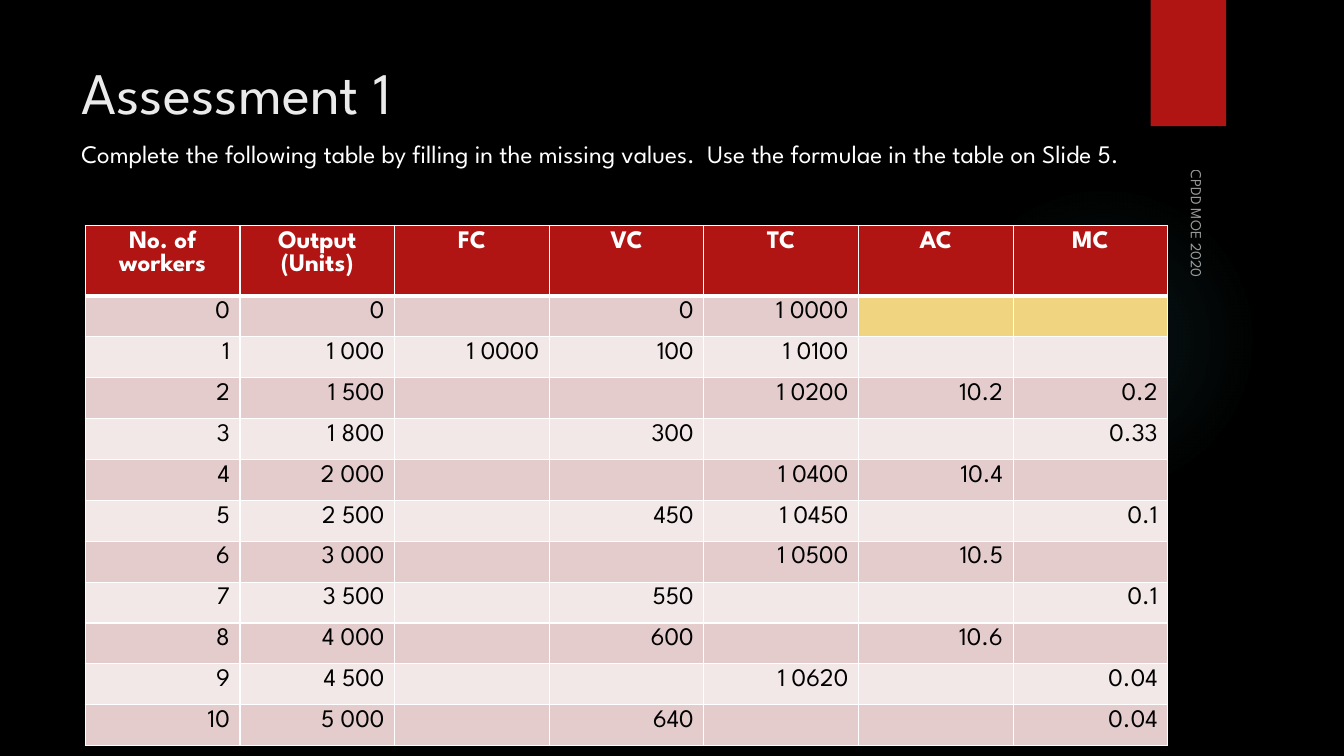
from lxml import etree
from pptx import Presentation
from pptx.dml.color import RGBColor
from pptx.enum.shapes import MSO_SHAPE as Shape
from pptx.enum.text import MSO_ANCHOR as Anchor, PP_ALIGN as Align
from pptx.oxml import parse_xml
from pptx.oxml.ns import nsdecls, qn
from pptx.util import Cm, Pt

# Content
TITLE = "Assessment 1"
TASK = ("Complete the following table by filling in the missing values.  "
        "Use the formulae in the table on Slide 5.")
FOOTER = "CPDD MOE 2020"
HEADINGS = ["No. of workers", "Output (Units)", "FC", "VC", "TC", "AC", "MC"]
COSTS = [
    ["0", "0", "", "0", "1 0000", "", ""],
    ["1", "1 000", "1 0000", "100", "1 0100", "", ""],
    ["2", "1 500", "", "", "1 0200", "10.2", "0.2"],
    ["3", "1 800", "", "300", "", "", "0.33"],
    ["4", "2 000", "", "", "1 0400", "10.4", ""],
    ["5", "2 500", "", "450", "1 0450", "", "0.1"],
    ["6", "3 000", "", "", "1 0500", "10.5", ""],
    ["7", "3 500", "", "550", "", "", "0.1"],
    ["8", "4 000", "", "600", "", "10.6", ""],
    ["9", "4 500", "", "", "1 0620", "", "0.04"],
    ["10", "5 000", "", "640", "", "", "0.04"],
]
NOT_APPLICABLE = {(1, 5), (1, 6)}

# Format
FONT = "League Spartan"
BLACK = RGBColor(0x00, 0x00, 0x00)
WHITE = RGBColor(0xFF, 0xFF, 0xFF)
PALE = RGBColor(0xEB, 0xEB, 0xEB)
RED = RGBColor(0xB0, 0x15, 0x13)
BANDS = [RGBColor(0xF2, 0xE8, 0xE7), RGBColor(0xE4, 0xCC, 0xCC)]
YELLOW = RGBColor(0xF0, 0xD4, 0x7F)
GLOW = RGBColor(0x50, 0xB9, 0xC1)
GLOW_STOPS = [(0, 7), (36, 6), (69, 0)]  # position and opacity in percent
TABLE_WIDTH, HEADING_HEIGHT, ROW_HEIGHT = Cm(27.28), Cm(1.43), Cm(1.03)


def write(paragraph, text, size, color, bold=False):
    run = paragraph.add_run()
    run.text = text
    run.font.color.rgb = color
    for name, value in {"name": FONT, "size": Pt(size), "bold": bold}.items():
        setattr(run.font, name, value)
    return run


def add_text(slide, box, text, size, color, **frame_format):
    label = slide.shapes.add_textbox(*map(Cm, box))
    for name, value in {"word_wrap": True, **frame_format}.items():
        setattr(label.text_frame, name, value)
    return label, write(label.text_frame.paragraphs[0], text, size, color)


def add_plain_shape(slide, kind, box):
    shape = slide.shapes.add_shape(kind, *map(Cm, box))
    shape.shadow.inherit = False
    shape.line.fill.background()
    return shape


def add_borders(cell, row):
    widths = {"L": 1, "R": 1, "T": 3 if row == 1 else 1, "B": 3 if row == 0 else 1}
    for side, width in widths.items():
        cell._tc.get_or_add_tcPr().append(parse_xml(
            f'<a:ln{side} {nsdecls("a")} w="{Pt(width)}"><a:solidFill>'
            f'<a:srgbClr val="{WHITE}"/></a:solidFill></a:ln{side}>'))


def main():
    deck = Presentation()
    deck.slide_width, deck.slide_height = Cm(33.87), Cm(19.05)
    slide = deck.slides.add_slide(deck.slide_layouts[6])
    slide.background.fill.solid()
    slide.background.fill.fore_color.rgb = BLACK

    # Soft glow and red tab
    glow = add_plain_shape(slide, Shape.OVAL, (23.9, 4.65, 7.82, 7.82))
    stops = "".join(
        f'<a:gs pos="{place * 1000}"><a:srgbClr val="{GLOW}">'
        f'<a:alpha val="{opacity * 1000}"/></a:srgbClr></a:gs>'
        for place, opacity in GLOW_STOPS)
    glow._element.spPr.find(qn("a:prstGeom")).addnext(parse_xml(
        f'<a:gradFill {nsdecls("a")}><a:gsLst>{stops}</a:gsLst><a:path path="circle">'
        '<a:fillToRect l="50000" t="50000" r="50000" b="50000"/></a:path></a:gradFill>'))
    tab = add_plain_shape(slide, Shape.RECTANGLE, (29, 0, 1.9, 3.18))
    tab.fill.solid()
    tab.fill.fore_color.rgb = RED

    # Title, task and sideways footer
    add_text(slide, (1.8, 1.27, 26.14, 2.34), TITLE, 42, PALE)
    add_text(slide, (1.8, 3.35, 27.28, 1.8), TASK, 18, WHITE)
    footer, footer_run = add_text(slide, (24.87, 8.97, 10.72, 0.84), FOOTER, 11, WHITE,
                                  vertical_anchor=Anchor.BOTTOM)
    footer.rotation = 90
    footer_color = footer_run._r.rPr.find(qn("a:solidFill"))[0]
    etree.SubElement(footer_color, qn("a:alpha")).set("val", "60000")

    # Cost table
    rows = [HEADINGS] + COSTS
    table = slide.shapes.add_table(
        len(rows), len(HEADINGS), Cm(2.15), Cm(5.68),
        TABLE_WIDTH, HEADING_HEIGHT + ROW_HEIGHT * len(COSTS)).table
    for r, values in enumerate(rows):
        table.rows[r].height = HEADING_HEIGHT if r == 0 else ROW_HEIGHT
        for c, value in enumerate(values):
            cell = table.cell(r, c)
            add_borders(cell, r)
            cell.fill.solid()
            band = RED if r == 0 else BANDS[r % 2]
            cell.fill.fore_color.rgb = YELLOW if (r, c) in NOT_APPLICABLE else band
            if value:
                paragraph = cell.text_frame.paragraphs[0]
                paragraph.alignment = Align.CENTER if r == 0 else Align.RIGHT
                write(paragraph, value, 18, WHITE if r == 0 else BLACK, bold=r == 0)

    deck.save("out.pptx")


if __name__ == "__main__":
    main()
